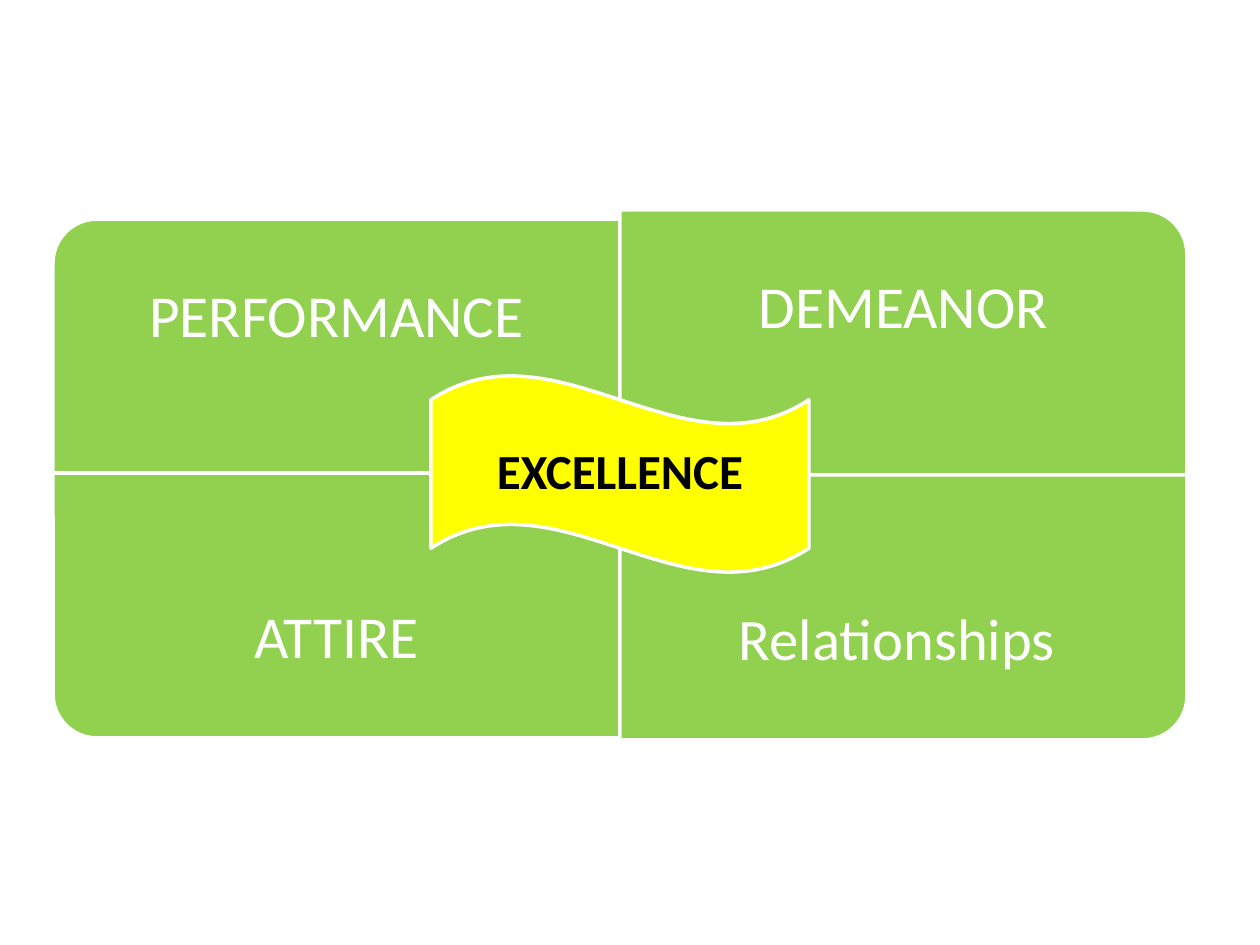
from pptx import Presentation
from pptx.dml.color import RGBColor
from pptx.enum.shapes import MSO_SHAPE
from pptx.enum.text import MSO_ANCHOR, PP_ALIGN
from pptx.util import Emu, Pt

GREEN = RGBColor(0x92, 0xD0, 0x50)
YELLOW = RGBColor(0xFF, 0xFF, 0x00)
WHITE = RGBColor(0xFF, 0xFF, 0xFF)
BLACK = RGBColor(0x00, 0x00, 0x00)

PX_PER_INCH = 126
QUADRANT_WIDTH, QUADRANT_HEIGHT = 567, 265
LABEL_HEIGHT = 198


def px(length):
    return Emu(round(length * 914400 / PX_PER_INCH))


def add_text(slide, text, box, size=34, color=WHITE, bold=False, inset=33):
    text_box = slide.shapes.add_textbox(*map(px, box))
    frame = text_box.text_frame
    frame.word_wrap = True
    frame.vertical_anchor = MSO_ANCHOR.MIDDLE
    frame.margin_left = frame.margin_right = px(inset)
    frame.margin_top = frame.margin_bottom = px(inset)
    paragraph = frame.paragraphs[0]
    paragraph.alignment = PP_ALIGN.CENTER
    paragraph.line_spacing = 0.9
    run = paragraph.add_run()
    run.text = text
    run.font.name = "Calibri"
    run.font.size = Pt(size)
    run.font.bold = bold
    run.font.color.rgb = color


def add_outlined_shape(slide, kind, box, fill):
    shape = slide.shapes.add_shape(kind, *map(px, box))
    shape.shadow.inherit = False
    shape.fill.solid()
    shape.fill.fore_color.rgb = fill
    shape.line.color.rgb = WHITE
    shape.line.width = Pt(2)
    return shape


def add_quadrant(slide, text, left, top, rotation, label_at_bottom, size=34):
    width, height = QUADRANT_WIDTH, QUADRANT_HEIGHT
    box = (left, top, width, height)
    if rotation in (90, 270):
        # A quarter turn swaps the sides around the same centre
        shift = (width - height) / 2
        box = (left + shift, top - shift, height, width)
    shape = add_outlined_shape(slide, MSO_SHAPE.ROUND_1_RECTANGLE, box, GREEN)
    shape.rotation = rotation
    label_top = top + (height - LABEL_HEIGHT if label_at_bottom else 0)
    add_text(slide, text, (left, label_top, width, LABEL_HEIGHT), size=size)


def add_banner(slide, text, left, top, width, height):
    add_outlined_shape(slide, MSO_SHAPE.WAVE, (left, top, width, height), YELLOW)
    label_box = (left, top + height / 4, width, height / 2)
    add_text(slide, text, label_box, size=28, color=BLACK, bold=True, inset=15)


def main():
    presentation = Presentation()
    presentation.slide_width = px(10 * PX_PER_INCH)
    presentation.slide_height = px(7.5 * PX_PER_INCH)
    slide = presentation.slides.add_slide(presentation.slide_layouts[6])

    # Four quadrants, each with its round corner outwards
    left, right = 53, 53 + QUADRANT_WIDTH
    add_quadrant(slide, "PERFORMANCE", left, 219, 270, False)
    add_quadrant(slide, "DEMEANOR", right, 210, 0, False)
    add_quadrant(slide, "ATTIRE", left, 473, 180, True)
    add_quadrant(slide, "Relationships ", right, 475, 90, True, size=33.5)

    # Central banner
    add_banner(slide, "EXCELLENCE", 431, 375, 378, 198)

    presentation.save("out.pptx")


if __name__ == "__main__":
    main()
